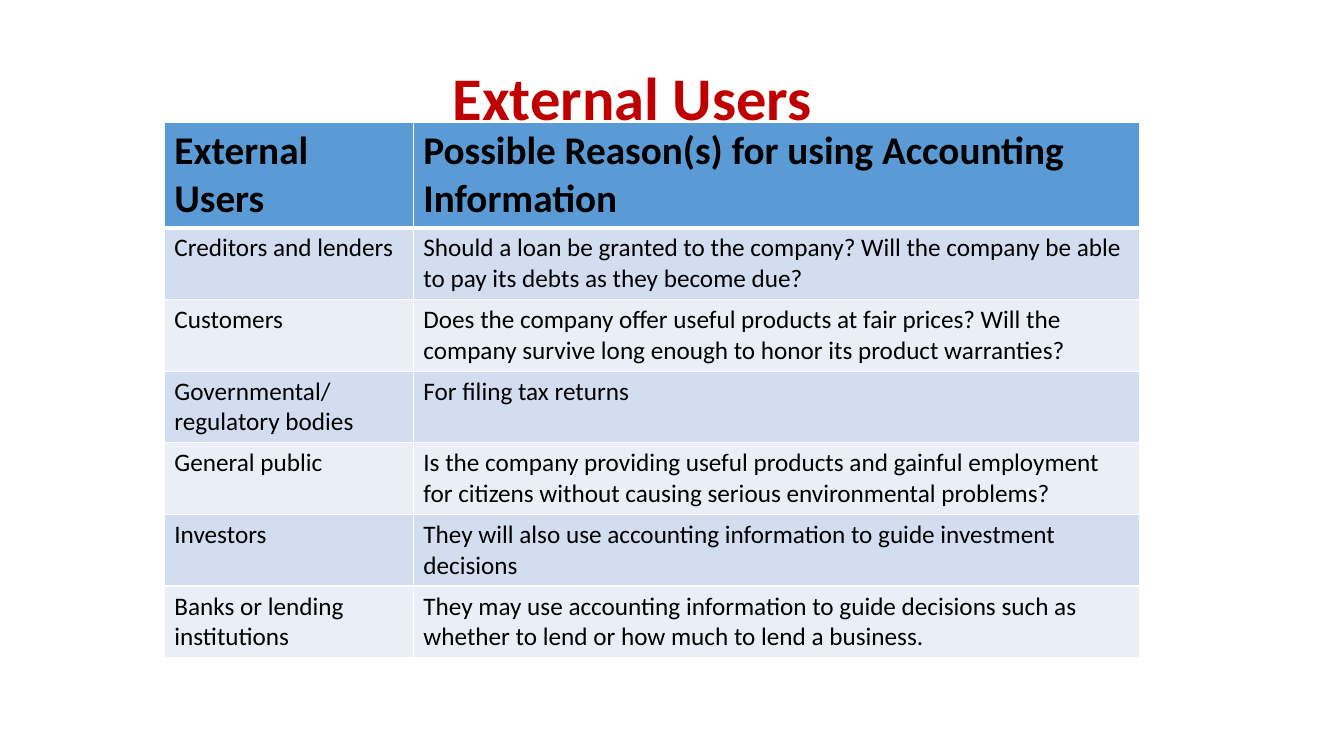
from typing import NamedTuple

from lxml.etree import SubElement
from pptx import Presentation
from pptx.dml.color import RGBColor
from pptx.enum.text import MSO_ANCHOR, MSO_AUTO_SIZE, PP_ALIGN
from pptx.oxml.ns import qn
from pptx.slide import Slide
from pptx.table import _Cell as Cell
from pptx.util import Emu, Pt

PX = 9144  # 100 px to the inch
FONT = "Calibri"
RED = RGBColor(0xC0, 0x00, 0x00)
BLACK = RGBColor(0x00, 0x00, 0x00)
WHITE = RGBColor(0xFF, 0xFF, 0xFF)
HEADER_BLUE = RGBColor(0x5B, 0x9B, 0xD5)
BANDS = (RGBColor(0xD2, 0xDE, 0xEF), RGBColor(0xEA, 0xEF, 0xF7))
COLUMN_WIDTHS = (247, 720)
HEADER_HEIGHT, ROW_HEIGHT = 103, 71
THIN, THICK = Pt(1), Pt(3)


class UserRow(NamedTuple):
    user: str
    reason: str


HEADINGS = UserRow("External Users", "Possible Reason(s) for using Accounting Information")
USERS = (
    UserRow("Creditors and lenders",
            "Should a loan be granted to the company? Will the company be able "
            "to pay its debts as they become due?"),
    UserRow("Customers",
            "Does the company offer useful products at fair prices? Will the "
            "company survive long enough to honor its product warranties?"),
    UserRow("Governmental/ regulatory bodies", "For filing tax returns"),
    UserRow("General public",
            "Is the company providing useful products and gainful employment "
            "for citizens without causing serious environmental problems?"),
    UserRow("Investors",
            "They will also use accounting information to guide investment decisions"),
    UserRow("Banks or lending institutions",
            "They may use accounting information to guide decisions such as "
            "whether to lend or how much to lend a business."),
)


def px(length: int) -> Emu:
    return Emu(length * PX)


def add_borders(cell: Cell, top: int, bottom: int) -> None:
    """Draw white borders; they must precede the cell's fill in the XML."""
    properties = cell._tc.get_or_add_tcPr()
    widths = {"a:lnL": THIN, "a:lnR": THIN, "a:lnT": top, "a:lnB": bottom}
    for tag, width in widths.items():
        border = SubElement(properties, qn(tag), w=str(width))
        fill = SubElement(border, qn("a:solidFill"))
        SubElement(fill, qn("a:srgbClr"), val=str(WHITE))


def fill_cell(cell: Cell, text: str, row: int) -> None:
    is_header = row == 0
    add_borders(cell, THICK if row == 1 else THIN, THICK if is_header else THIN)
    cell.fill.solid()
    cell.fill.fore_color.rgb = HEADER_BLUE if is_header else BANDS[(row - 1) % 2]
    cell.text = text
    font = cell.text_frame.paragraphs[0].font
    font.name, font.size, font.bold = FONT, Pt(28 if is_header else 18), is_header
    font.color.rgb = BLACK


def set_title(slide: Slide) -> None:
    title = slide.shapes.title
    title.left, title.top, title.width, title.height = map(px, (92, 60, 1084, 80))
    frame = title.text_frame
    frame.text = "External Users "
    frame.auto_size = MSO_AUTO_SIZE.NONE
    frame.vertical_anchor = MSO_ANCHOR.MIDDLE
    heading = frame.paragraphs[0]
    heading.alignment, heading.line_spacing = PP_ALIGN.CENTER, 0.9
    heading.font.name, heading.font.size, heading.font.bold = FONT, Pt(43.2), True
    heading.font.color.rgb = RED


def add_users_table(slide: Slide) -> None:
    rows = (HEADINGS, *USERS)
    height = HEADER_HEIGHT + ROW_HEIGHT * len(USERS)
    table = slide.shapes.add_table(
        len(rows), len(COLUMN_WIDTHS),
        px(163), px(121), px(sum(COLUMN_WIDTHS)), px(height)).table
    for column, width in zip(table.columns, COLUMN_WIDTHS):
        column.width = px(width)
    for index, entry in enumerate(rows):
        table.rows[index].height = px(ROW_HEIGHT if index else HEADER_HEIGHT)
        for cell, text in zip(table.rows[index].cells, entry):
            fill_cell(cell, text, index)


def main() -> None:
    deck = Presentation()
    deck.slide_width, deck.slide_height = px(1333), px(750)
    slide = deck.slides.add_slide(deck.slide_layouts.get_by_name("Title Only"))
    set_title(slide)
    add_users_table(slide)
    deck.save("out.pptx")


if __name__ == "__main__":
    main()
